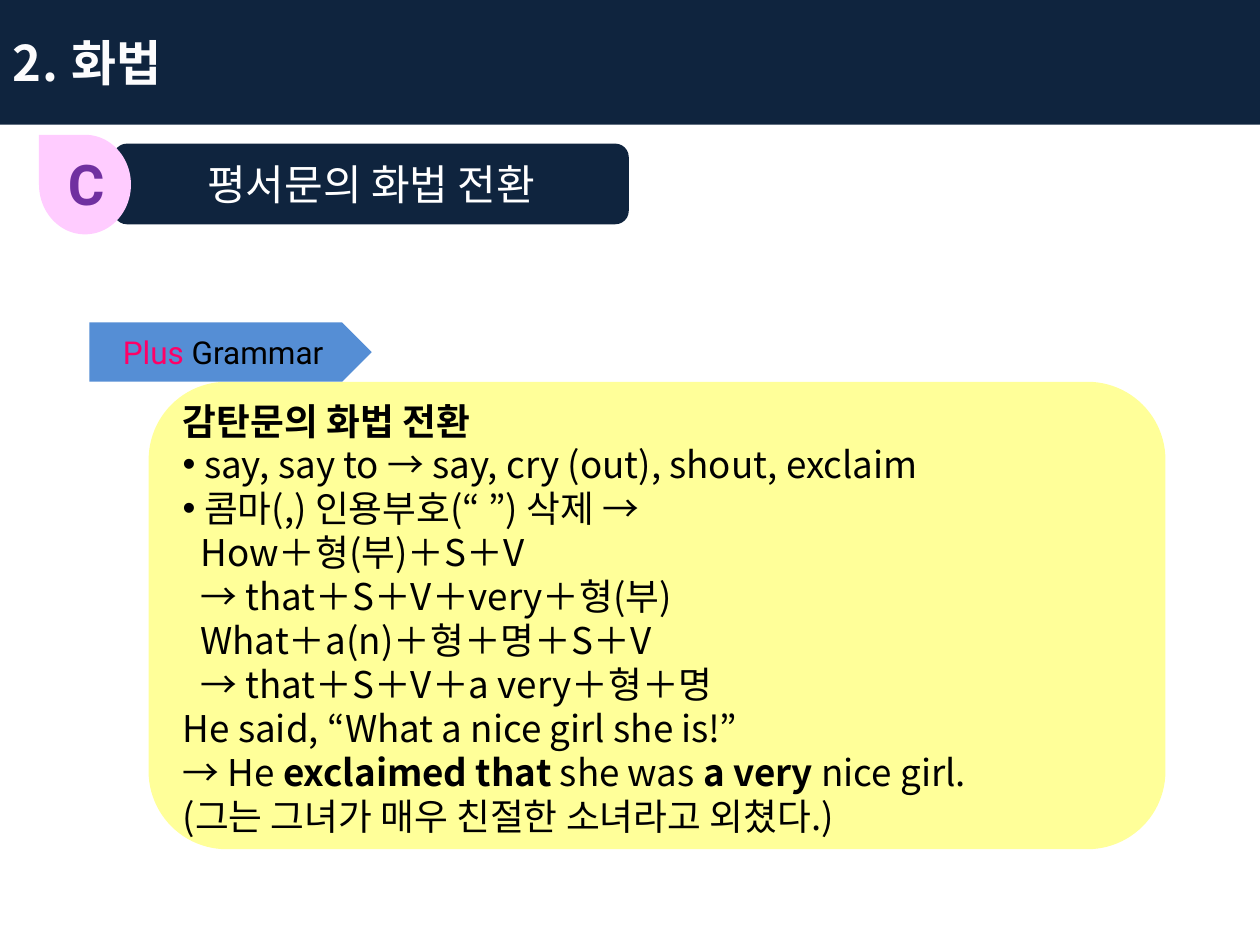
from lxml import etree
from pptx import Presentation
from pptx.dml.color import RGBColor
from pptx.enum.shapes import MSO_SHAPE
from pptx.enum.text import MSO_ANCHOR, MSO_AUTO_SIZE, PP_ALIGN
from pptx.oxml.ns import qn
from pptx.util import Inches, Pt

ROUNDED = MSO_SHAPE.FLOWCHART_ALTERNATE_PROCESS
TEARDROP = MSO_SHAPE.TEAR
PENTAGON = MSO_SHAPE.PENTAGON
MIDDLE, TOP = MSO_ANCHOR.MIDDLE, MSO_ANCHOR.TOP
LEFT, CENTER = PP_ALIGN.LEFT, PP_ALIGN.CENTER
NO_FIT = MSO_AUTO_SIZE.NONE

KOREAN, LATIN = "Noto Sans CJK KR", "Roboto"
NAVY, WHITE, BLACK = "0F243E", "FFFFFF", "000000"

PLAIN, BULLET, INDENTED = (0, 0), (0.17, -0.17), (0.14, 0)
GRAMMAR_LINES = [
    (PLAIN, [("감탄문의 화법 전환", True)]),
    (BULLET, [("say, say to → say, cry (out), shout, exclaim", False)]),
    (BULLET, [("콤마(,) 인용부호(“ ”) 삭제 →", False)]),
    (INDENTED, [("How＋형(부)＋S＋V", False)]),
    (INDENTED, [("→ that＋S＋V＋very＋형(부)", False)]),
    (INDENTED, [("What＋a(n)＋형＋명＋S＋V", False)]),
    (INDENTED, [("→ that＋S＋V＋a very＋형＋명", False)]),
    (PLAIN, [("He said, “What a nice girl she is!”", False)]),
    (PLAIN, [("→ He ", False), ("exclaimed that ", True), ("she was ", False),
             ("a very ", True), ("nice girl.", False)]),
    (PLAIN, [("(그는 그녀가 매우 친절한 소녀라고 외쳤다.)", False)]),
]


def color(value):
    return RGBColor.from_string(value)


def set_all(target, values):
    for name, value in values.items():
        setattr(target, name, value)


def place(sp, left, top, width, height):
    set_all(sp, {"left": Inches(left), "top": Inches(top),
                 "width": Inches(width), "height": Inches(height)})


def paint(sp, fill):
    sp.fill.solid()
    sp.fill.fore_color.rgb = color(fill)


def add_panel(s, kind, box, fill, rotation=0):
    sp = s.shapes.add_shape(kind, *map(Inches, box))
    sp.shadow.inherit = False
    sp.rotation = rotation
    paint(sp, fill)
    sp.line.fill.background()
    return sp


def setup_frame(sp, anchor=MIDDLE):
    tf = sp.text_frame
    set_all(tf, {"word_wrap": True, "auto_size": NO_FIT, "vertical_anchor": anchor})
    return tf


def add_run(p, text, size, font, fill, bold=False):
    r = p.add_run()
    r.text = text
    set_all(r.font, {"size": Pt(size), "name": font, "bold": bold})
    r.font.color.rgb = color(fill)
    etree.SubElement(r.font._element, qn("a:ea")).set("typeface", font)
    return r


def write_line(sp, runs, size, font, align=CENTER, anchor=MIDDLE, bold=False):
    p = setup_frame(sp, anchor).paragraphs[0]
    p.alignment = align
    return [add_run(p, text, size, font, fill, bold) for text, fill in runs]


def set_bullet(p, margin, indent):
    pPr = p._p.get_or_add_pPr()
    pPr.set("marL", str(Inches(margin)))
    pPr.set("indent", str(Inches(indent)))
    if indent:
        etree.SubElement(pPr, qn("a:buChar")).set("char", "•")
    else:
        etree.SubElement(pPr, qn("a:buNone"))


def fill_title(sp):
    place(sp, 0, 0, 10, 0.99)
    paint(sp, NAVY)
    runs = write_line(sp, [("2. 화법", "FCFCFD")], 28, KOREAN, LEFT, bold=True)
    runs[0].font._element.set("spc", "50")


def fill_body(sp):
    place(sp, 1.35, 3.05, 7.72, 3.71)
    tf = setup_frame(sp)
    for i, (indents, runs) in enumerate(GRAMMAR_LINES):
        p = tf.add_paragraph() if i else tf.paragraphs[0]
        set_all(p, {"alignment": LEFT, "line_spacing": Pt(25.1),
                    "space_before": Pt(0), "space_after": Pt(0)})
        set_bullet(p, *indents)
        for text, bold in runs:
            add_run(p, text, 21, KOREAN, BLACK, bold)


def main():
    prs = Presentation()
    set_all(prs, {"slide_width": Inches(10), "slide_height": Inches(7.5)})
    s = prs.slides.add_slide(prs.slide_layouts[1])
    title, body = s.placeholders

    fill_title(title)
    heading = add_panel(s, ROUNDED, (0.9, 1.14, 4.09, 0.64), NAVY)
    write_line(heading, [("평서문의 화법 전환", WHITE)], 24, KOREAN)

    add_panel(s, TEARDROP, (0.28, 1.1, 0.79, 0.73), "FFCCFF", 270)
    letter = s.shapes.add_textbox(*map(Inches, (0.44, 1.14, 0.47, 0.64)))
    write_line(letter, [("C", "7030A0")], 32, LATIN, LEFT, TOP, True)

    add_panel(s, ROUNDED, (1.18, 3.03, 8.07, 3.71), "FFFF99")
    s.shapes._spTree.append(body._element)
    fill_body(body)

    tag = add_panel(s, PENTAGON, (0.71, 2.56, 2.24, 0.47), "558ED5")
    write_line(tag, [("Plus ", "FF0066"), ("Grammar", BLACK)], 18, LATIN)

    prs.save("out.pptx")


if __name__ == "__main__":
    main()
